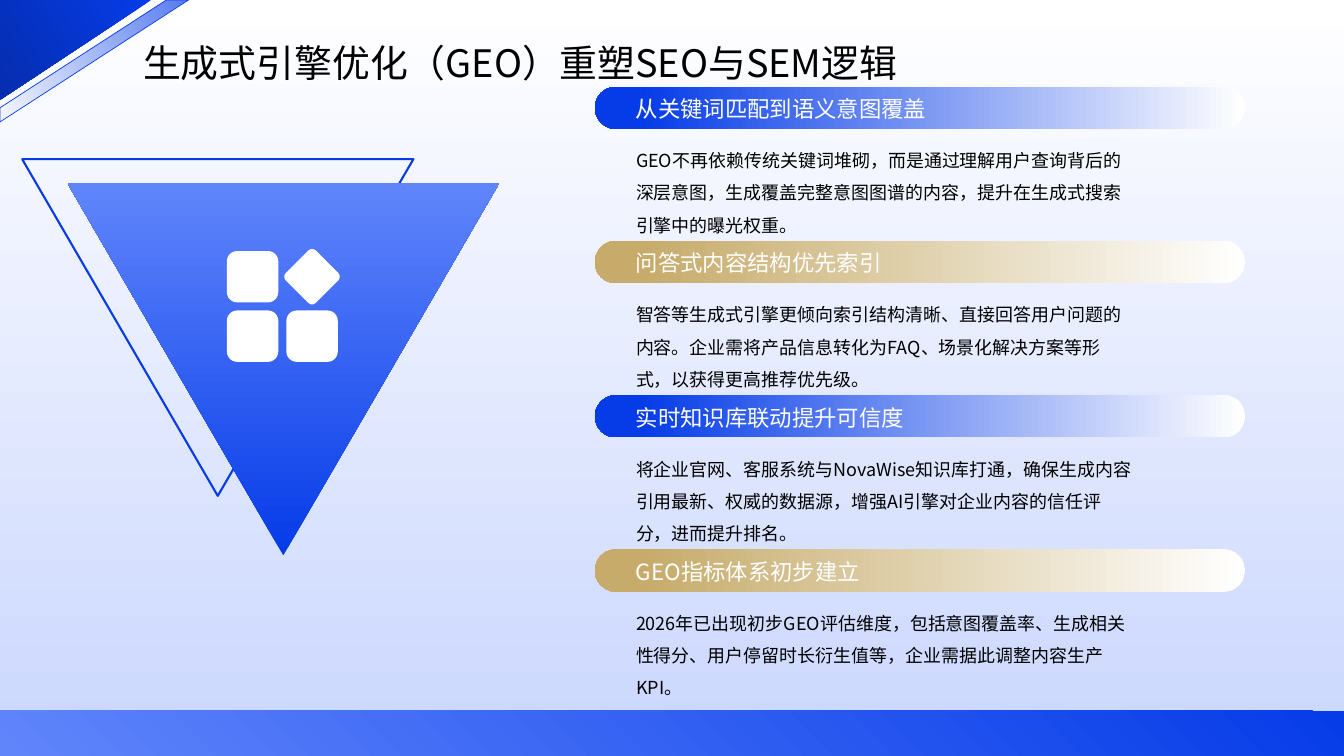
"""Build a slide on how generative engine optimization reshapes SEO and SEM."""
from dataclasses import dataclass

import lxml.etree
import pptx
import pptx.dml.color
import pptx.enum.shapes
import pptx.enum.text
import pptx.oxml.ns
import pptx.util

Inches = pptx.util.Inches
Shape = pptx.enum.shapes.MSO_SHAPE
Anchor = pptx.enum.text.MSO_ANCHOR

TITLE = "生成式引擎优化（GEO）重塑SEO与SEM逻辑"
SECTIONS = [
    ("从关键词匹配到语义意图覆盖",
     "GEO不再依赖传统关键词堆砌，而是通过理解用户查询背后的深层意图，"
     "生成覆盖完整意图图谱的内容，提升在生成式搜索引擎中的曝光权重。"),
    ("问答式内容结构优先索引",
     "智答等生成式引擎更倾向索引结构清晰、直接回答用户问题的内容。"
     "企业需将产品信息转化为FAQ、场景化解决方案等形式，以获得更高推荐优先级。"),
    ("实时知识库联动提升可信度",
     "将企业官网、客服系统与NovaWise知识库打通，确保生成内容引用最新、权威的数据源，"
     "增强AI引擎对企业内容的信任评分，进而提升排名。"),
    ("GEO指标体系初步建立",
     "2026年已出现初步GEO评估维度，包括意图覆盖率、生成相关性得分、"
     "用户停留时长衍生值等，企业需据此调整内容生产KPI。"),
]


@dataclass(frozen=True)
class Theme:
    """Colours, font and type sizes of the slide."""
    blue: str = "063CE8"
    deep_blue: str = "052DAE"
    light_blue: str = "6085FB"
    pale_blue: str = "CAD6FE"
    gold: str = "C6AB6A"
    white: str = "FFFFFF"
    black: str = "000000"
    font: str = "Noto Sans CJK SC"
    title_size: float = 27
    heading_size: float = 16
    body_size: float = 12.8


THEME = Theme()
WIDTH, HEIGHT = 13.33, 7.5
BAR_LEFT, BAR_TOP, BAR_WIDTH, BAR_HEIGHT = 5.9, 0.86, 6.45, 0.42
SECTION_PITCH = 1.53
TEXT_LEFT = 6.21
FOOTER_HEIGHT = 0.45
TILE_LEFT, TILE_TOP, TILE_SIZE, TILE_PITCH = 2.25, 2.49, 0.51, 0.59
DIAMOND_SIZE = 0.42
CORNER = [(0, 0), (1.5, 0), (0, 0.99)]
STRIPE = [(1.65, 0), (1.87, 0), (0, 1.21), (0, 1.07)]
CORNER_ANGLE = 147


def rgb(color):
    return pptx.dml.color.RGBColor.from_string(color)


def fill_gradient(fill, start, end, clockwise, end_position=1.0):
    fill.gradient()
    fill.gradient_angle = (360 - clockwise) % 360
    for stop, color, position in zip(fill.gradient_stops, (start, end), (0, end_position)):
        stop.color.rgb = rgb(color)
        stop.position = position


def add_shape(page, kind, left, top, width, height, roundness=None):
    shape = page.shapes.add_shape(kind, *map(Inches, (left, top, width, height)))
    shape.shadow.inherit = False
    shape.line.fill.background()
    if roundness is not None:
        shape.adjustments[0] = roundness
    return shape


def add_triangle(page, left, top, width, height):
    triangle = add_shape(page, Shape.ISOSCELES_TRIANGLE, left, top, width, height)
    triangle._element.spPr.xfrm.set("flipV", "1")
    return triangle


def add_outline(page, points):
    corners = [(Inches(x), Inches(y)) for x, y in points]
    builder = page.shapes.build_freeform(*corners[0])
    builder.add_line_segments(corners[1:], close=True)
    outline = builder.convert_to_shape()
    outline.shadow.inherit = False
    outline.line.fill.background()
    return outline


def set_line(shape, width):
    shape.line.color.rgb = rgb(THEME.blue)
    shape.line.width = pptx.util.Pt(width)


def write(box, text, size, color, spacing, anchor):
    frame = box.text_frame
    frame.word_wrap = True
    frame.auto_size = pptx.enum.text.MSO_AUTO_SIZE.NONE
    frame.vertical_anchor = anchor
    para = frame.paragraphs[0]
    para.text = text
    para.alignment = pptx.enum.text.PP_ALIGN.LEFT
    para.line_spacing = spacing
    para.font.size = pptx.util.Pt(size)
    para.font.color.rgb = rgb(color)
    para.font.name = THEME.font
    qn = pptx.oxml.ns.qn
    settings = para._p.pPr
    settings.set("hangingPunct", "0")
    lxml.etree.SubElement(settings.find(qn("a:defRPr")), qn("a:ea"), typeface=THEME.font)


def add_text(page, top, width, height, *style):
    box = page.shapes.add_textbox(*map(Inches, (TEXT_LEFT, top, width, height)))
    write(box, *style)


def add_title(page):
    title = page.shapes.title
    title.left, title.top, title.width, title.height = map(Inches, (1.42, 0.23, 8.42, 0.65))
    frame = title.text_frame
    frame.margin_left = frame.margin_right = frame.margin_top = frame.margin_bottom = 0
    write(title, TITLE, THEME.title_size, THEME.black, 1.3, Anchor.MIDDLE)


def add_sections(page):
    for index, (heading, body) in enumerate(SECTIONS):
        top = BAR_TOP + index * SECTION_PITCH
        color = (THEME.blue, THEME.gold)[index % 2]
        bar = add_shape(page, Shape.ROUNDED_RECTANGLE, BAR_LEFT, top, BAR_WIDTH, BAR_HEIGHT, 0.5)
        fill_gradient(bar.fill, THEME.white, color, 180, 0.93)
        add_text(page, top + 0.02, 5.27, 0.37, heading,
                 THEME.heading_size, THEME.white, 1.1, Anchor.MIDDLE)
        add_text(page, top + 0.47, 5.15, 0.9, body,
                 THEME.body_size, THEME.black, 1.5, Anchor.TOP)


def add_emblem(page):
    frame = add_triangle(page, 0.22, 1.58, 3.88, 3.34)
    frame.fill.background()
    set_line(frame, 1.5)
    panel = add_triangle(page, 0.67, 1.82, 4.28, 3.69)
    fill_gradient(panel.fill, THEME.blue, THEME.light_blue, 90)
    for column, row in ((0, 0), (1, 0), (0, 1), (1, 1)):
        is_diamond = (column, row) == (1, 0)
        size = DIAMOND_SIZE if is_diamond else TILE_SIZE
        inset = (TILE_SIZE - size) / 2
        tile = add_shape(page, Shape.ROUNDED_RECTANGLE,
                         TILE_LEFT + column * TILE_PITCH + inset,
                         TILE_TOP + row * TILE_PITCH + inset,
                         size, size, 0.12 if is_diamond else 0.2)
        tile.rotation = 45 if is_diamond else 0
        tile.fill.solid()
        tile.fill.fore_color.rgb = rgb(THEME.white)


def add_corner(page):
    corner = add_outline(page, CORNER)
    fill_gradient(corner.fill, THEME.blue, THEME.deep_blue, CORNER_ANGLE)
    stripe = add_outline(page, STRIPE)
    fill_gradient(stripe.fill, THEME.blue, THEME.blue, CORNER_ANGLE)
    qn = pptx.oxml.ns.qn
    gradient = stripe._element.spPr.find(qn("a:gradFill"))
    for color, opacity in zip(gradient.iter(qn("a:srgbClr")), (68, 0)):
        lxml.etree.SubElement(color, qn("a:alpha"), val=str(opacity * 1000))
    set_line(stripe, 0.5)


def main():
    deck = pptx.Presentation()
    deck.slide_width, deck.slide_height = Inches(WIDTH), Inches(HEIGHT)
    page = deck.slides.add_slide(deck.slide_layouts[5])
    fill_gradient(page.background.fill, THEME.white, THEME.pale_blue, 90)
    add_title(page)
    add_sections(page)
    footer = add_shape(page, Shape.RECTANGLE, 0, HEIGHT - FOOTER_HEIGHT, WIDTH, FOOTER_HEIGHT)
    fill_gradient(footer.fill, THEME.blue, THEME.light_blue, 135)
    add_emblem(page)
    add_corner(page)
    deck.save("out.pptx")


if __name__ == "__main__":
    main()
